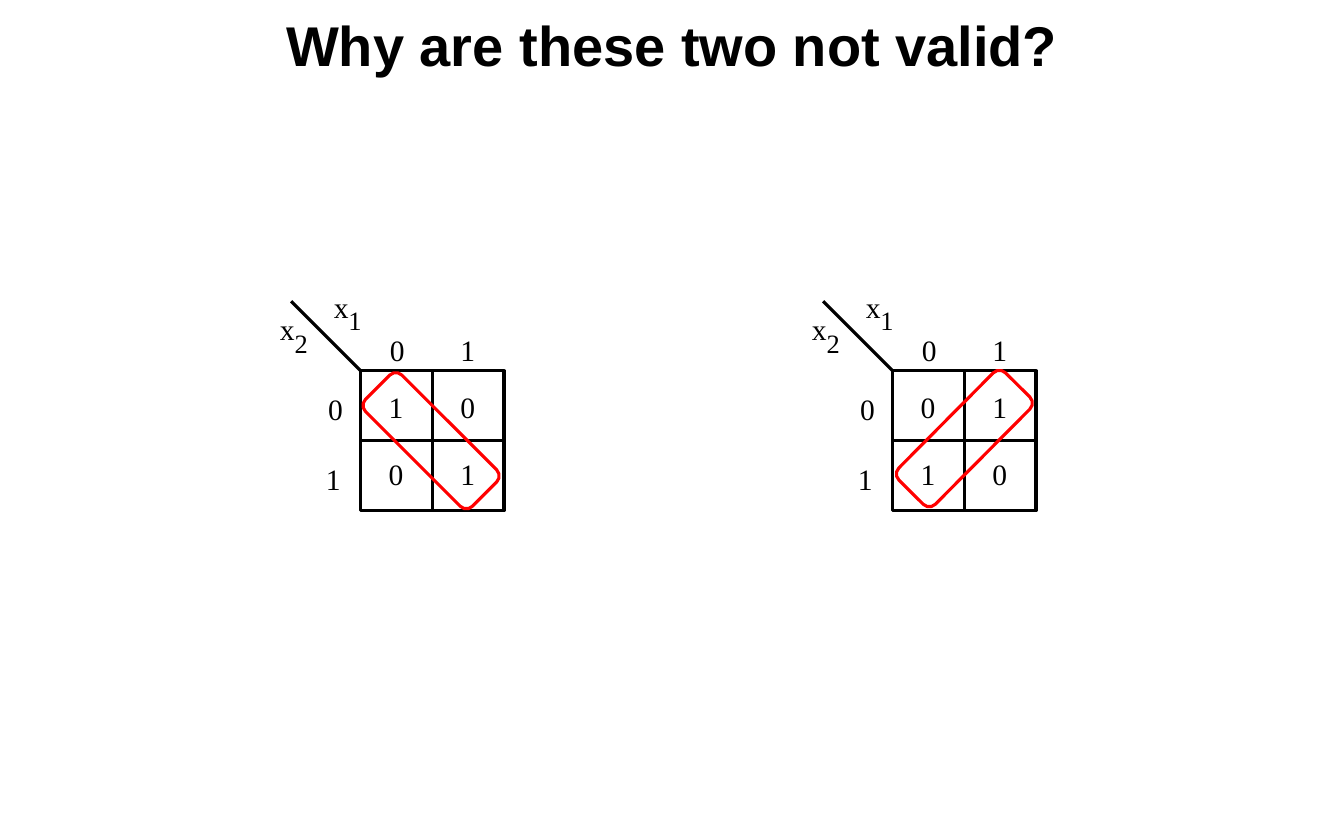
"""Build a slide that shows two invalid groupings on two-variable Karnaugh maps."""
from lxml.etree import SubElement
from pptx import Presentation
from pptx.dml.color import RGBColor
from pptx.enum.shapes import MSO_CONNECTOR as Connector, MSO_SHAPE as Shape
from pptx.enum.text import MSO_ANCHOR as Anchor, MSO_AUTO_SIZE as AutoSize, PP_ALIGN as Align
from pptx.oxml.ns import qn
from pptx.util import Pt

COLORS = {"ink": "000000", "paper": "FFFFFF", "loop": "FF0000"}
GRID_LEFT, GRID_TOP, GRID_WIDTH, GRID_HEIGHT = 231.8, 238.3, 92.2, 90
MAP_STEP = 342
CELL_LEFTS, CELL_TOPS = (249.8, 295.9), (249.8, 293)
HEADINGS = [("0", 211, 251.3), ("1", 209.5, 296.6), ("0", 250.6, 213.1), ("1", 295.9, 213.1)]
VARIABLES = [("2", 180, 200.2), ("1", 214.6, 185.8)]
MAPS = [("10", "01"), ("01", "10")]
LOOPS = [(260.6, 234.7, 315), (603.4, 233.3, 224.8)]


class SlideBuilder:
    """Hold the style and the current slide."""

    title_font, label_font = "Arial", "Times New Roman"
    title_size, label_size, index_size, line_width = 36, 19, 17, 2

    def __init__(self, slide):
        self.slide = slide

    def color(self, name):
        return RGBColor.from_string(COLORS[name])

    def format_text(self, frame, font, size, bold=False):
        for para in frame.paragraphs:
            for span in para.runs:
                span.font.name, span.font.size, span.font.bold = font, Pt(size), bold
                span.font.color.rgb = self.color("ink")

    def title(self, text, left, top, width, height):
        box = self.slide.shapes.title
        box.left, box.top, box.width, box.height = Pt(left), Pt(top), Pt(width), Pt(height)
        frame = box.text_frame
        frame.text = text
        frame.auto_size, frame.vertical_anchor = AutoSize.NONE, Anchor.MIDDLE
        frame.paragraphs[0].alignment = Align.CENTER
        self.format_text(frame, self.title_font, self.title_size, True)

    def label(self, text, left, top, size=label_size, width=14.4):
        box = self.slide.shapes.add_textbox(Pt(left), Pt(top), Pt(width), Pt(size * 1.22))
        frame = box.text_frame
        frame.margin_left = frame.margin_top = frame.margin_right = frame.margin_bottom = 0
        frame.word_wrap, frame.auto_size = False, AutoSize.SHAPE_TO_FIT_TEXT
        frame.text = text
        self.format_text(frame, self.label_font, size)

    def outline(self, kind, left, top, width, height, line, fill=None):
        shape = self.slide.shapes.add_shape(kind, Pt(left), Pt(top), Pt(width), Pt(height))
        shape.shadow.inherit = False
        if fill:
            shape.fill.solid()
            shape.fill.fore_color.rgb = self.color(fill)
        else:
            shape.fill.background()
        shape.line.color.rgb, shape.line.width = self.color(line), Pt(self.line_width)
        return shape

    def line(self, start=(0, 0), end=(0, 0)):
        ends = [Pt(value) for value in (*start, *end)]
        line = self.slide.shapes.add_connector(Connector.STRAIGHT, *ends)
        line.line.color.rgb, line.line.width = self.color("ink"), Pt(self.line_width)
        SubElement(line._element.spPr, qn("a:effectLst"))
        return line

    def divider(self, grid, start_side, end_side):
        line = self.line()
        line.begin_connect(grid, start_side)
        line.end_connect(grid, end_side)

    def karnaugh_map(self, rows, shift):
        left = GRID_LEFT + shift
        grid = self.outline(Shape.RECTANGLE, left, GRID_TOP, GRID_WIDTH, GRID_HEIGHT, "ink", "paper")
        self.divider(grid, 3, 1)
        self.divider(grid, 2, 0)
        self.line((left - 44.6, GRID_TOP - 44.6), (left, GRID_TOP))
        for index, x, y in VARIABLES:
            self.label("x", x + shift, y)
            self.label(index, x + shift + 9.4, y + 10, self.index_size, 13)
        for text, x, y in HEADINGS:
            self.label(text, x + shift, y)
        for row, y in zip(rows, CELL_TOPS):
            for value, x in zip(row, CELL_LEFTS):
                self.label(value, x + shift, y, width=9.4)

    def loop(self, left, top, rotation):
        shape = self.outline(Shape.ROUNDED_RECTANGLE, left, top, 33.1, 97.2, "loop")
        shape.rotation = rotation


def main():
    deck = Presentation()
    deck.slide_width, deck.slide_height = Pt(864), Pt(540)
    page = SlideBuilder(deck.slides.add_slide(deck.slide_layouts[5]))
    page.title("Why are these two not valid?", 72, 1.4, 720, 54)
    for number, rows in enumerate(MAPS):
        page.karnaugh_map(rows, number * MAP_STEP)
    for loop in LOOPS:
        page.loop(*loop)
    deck.save("out.pptx")


if __name__ == "__main__":
    main()
